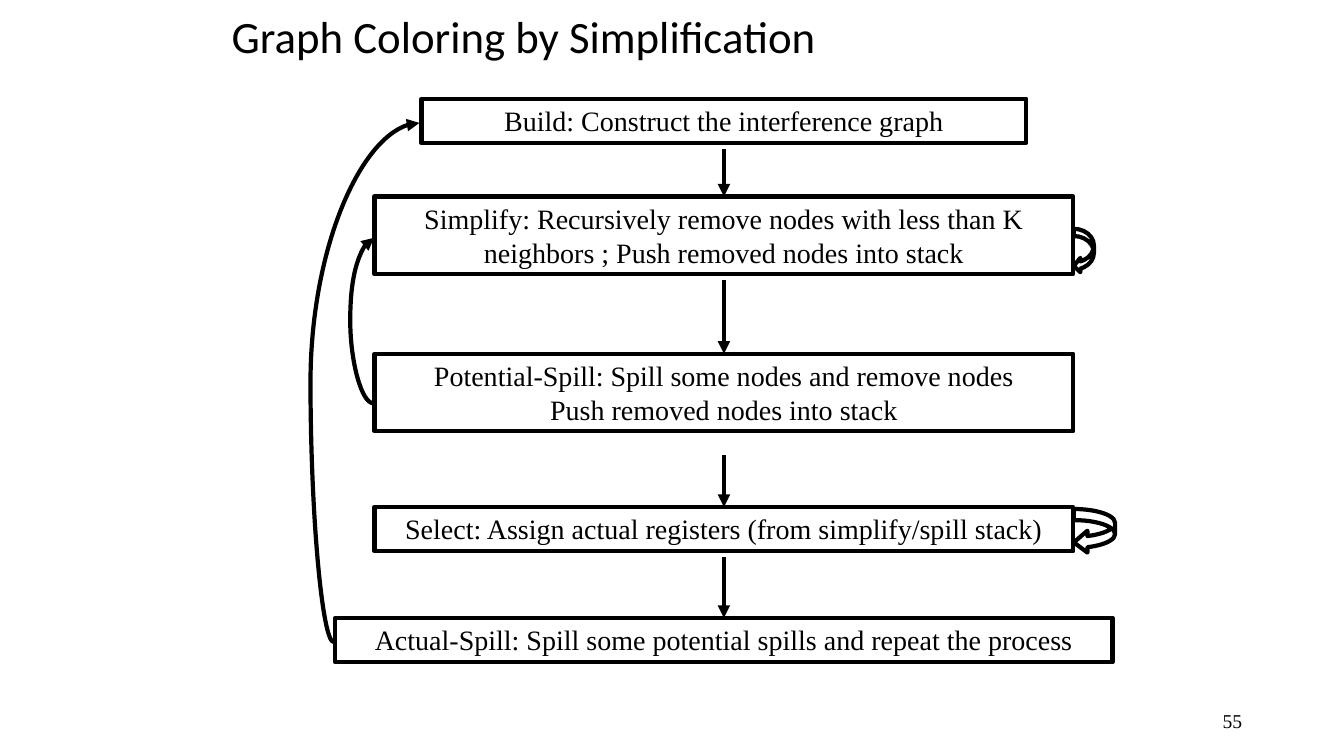
from lxml import etree
from pptx import Presentation
from pptx.dml.color import RGBColor
from pptx.enum.shapes import MSO_CONNECTOR as CONNECTOR, MSO_SHAPE as SHAPE
from pptx.enum.text import MSO_ANCHOR as ANCHOR, PP_ALIGN as ALIGN
from pptx.oxml.ns import qn
from pptx.util import Inches, Pt

BLACK = RGBColor(0, 0, 0)
WHITE = RGBColor(255, 255, 255)
SERIF = "Times New Roman"
SANS = "Calibri"
CENTER = 7.18
BULGE = 0.23

STAGES = [
    (0.98, 6, 0.44, "Build: Construct the interference graph"),
    (1.95, 6.93, 0.77, "Simplify: Recursively remove nodes with less than K "
                       "neighbors ; Push removed nodes into stack"),
    (3.51, 6.93, 0.77, "Potential-Spill: Spill some nodes and remove nodes\n"
                       "Push removed nodes into stack"),
    (5.03, 6.93, 0.44, "Select: Assign actual registers (from simplify/spill stack)"),
    (6.13, 7.71, 0.44, "Actual-Spill: Spill some potential spills and repeat the process"),
]
ARROW_STARTS = [1.48, 2.78, 4.51, 5.53]


def write_text(shape, text, size=20, font=SERIF, align=ALIGN.CENTER,
               anchor=ANCHOR.TOP, spacing=1.0):
    frame = shape.text_frame
    frame.word_wrap = True
    frame.vertical_anchor = anchor
    frame.text = text
    for paragraph in frame.paragraphs:
        paragraph.alignment = align
        paragraph.line_spacing = spacing
        paragraph.font.size = Pt(size)
        paragraph.font.name = font
        paragraph.font.color.rgb = BLACK


def add_label(slide, box, text, **text_format):
    shape = slide.shapes.add_textbox(*map(Inches, box))
    write_text(shape, text, anchor=ANCHOR.MIDDLE, **text_format)


def add_outline(slide, kind, box):
    shape = slide.shapes.add_shape(kind, *map(Inches, box))
    shape.shadow.inherit = False
    shape.fill.background()
    shape.line.color.rgb = BLACK
    shape.line.width = Pt(3)
    return shape


def add_arrow(slide, kind, start, end):
    arrow = slide.shapes.add_connector(kind, *map(Inches, start + end))
    arrow.line.color.rgb = BLACK
    arrow.line.width = Pt(3)
    properties = arrow.element.spPr
    line = properties.find(qn("a:ln"))
    etree.SubElement(line, qn("a:tailEnd"), type="triangle")
    etree.SubElement(properties, qn("a:effectLst"))
    return arrow


def add_return_arrow(slide, start, end):
    arrow = add_arrow(slide, CONNECTOR.CURVE, start, end)
    bend = round(-BULGE / (end[0] - start[0]) * 100000)
    geometry = arrow.element.spPr.find(qn("a:prstGeom"))
    guides = geometry.find(qn("a:avLst"))
    etree.SubElement(guides, qn("a:gd"), name="adj1", fmla=f"val {bend}")


def add_loop(slide, box, adjustments):
    loop = add_outline(slide, SHAPE.CURVED_LEFT_ARROW, box)
    for index, value in enumerate(adjustments):
        loop.adjustments[index] = value


def add_flowchart(slide, center):
    stages = []
    for top, width, height, text in STAGES:
        stage = add_outline(slide, SHAPE.RECTANGLE, (center - width / 2, top, width, height))
        write_text(stage, text)
        stages.append(stage)
    for start, (top, *_), stage in zip(ARROW_STARTS, STAGES[1:], stages[1:]):
        arrow = add_arrow(slide, CONNECTOR.STRAIGHT, (center, start), (center, top))
        arrow.end_connect(stage, 0)
    add_return_arrow(slide, (center - 3.48, 4), (center - 3.47, 2.36))
    add_return_arrow(slide, (center - 3.87, 6.37), (center - 3.02, 1.22))
    loop_left = center + 3.47
    add_loop(slide, (loop_left, 2.27, 0.2, 0.44), (0.36, 0.71, 0.33))
    add_loop(slide, (loop_left, 5.05, 0.41, 0.44), (0.27, 0.53, 0.33))


def main():
    presentation = Presentation()
    presentation.slide_width = Inches(13.33)
    presentation.slide_height = Inches(7.5)
    slide = presentation.slides.add_slide(presentation.slide_layouts[6])
    slide.background.fill.solid()
    slide.background.fill.fore_color.rgb = WHITE
    add_label(slide, (2.2, 0, 8.5, 0.77), "Graph Coloring by Simplification",
              size=32, font=SANS, align=ALIGN.LEFT, spacing=0.9)
    add_flowchart(slide, CENTER)
    add_label(slide, (9.42, 6.95, 3, 0.4), "55", size=14, align=ALIGN.RIGHT)
    presentation.save("out.pptx")


if __name__ == "__main__":
    main()
